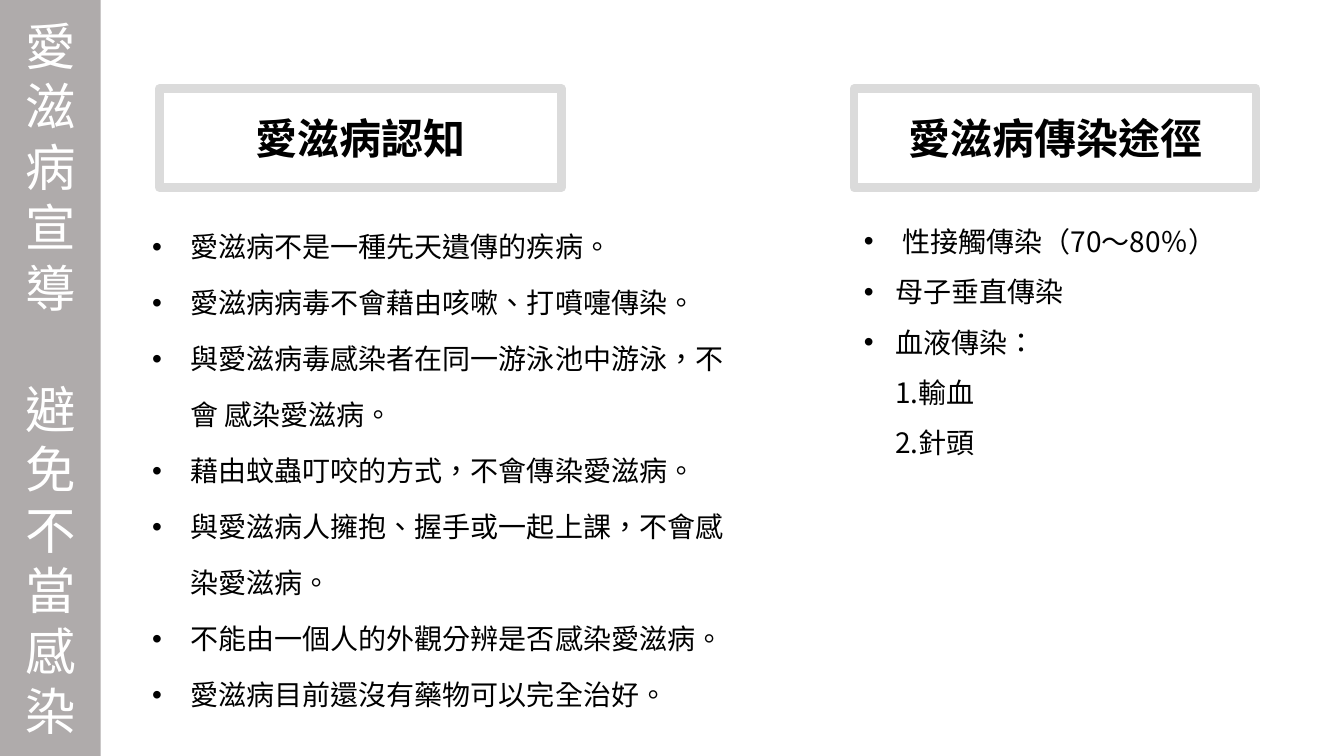
from dataclasses import dataclass

from lxml.etree import SubElement
from pptx import Presentation
from pptx.dml.color import RGBColor
from pptx.enum.shapes import MSO_SHAPE
from pptx.enum.text import MSO_ANCHOR, MSO_AUTO_SIZE, PP_ALIGN
from pptx.oxml.ns import qn
from pptx.shapes.autoshape import Shape
from pptx.slide import Slide
from pptx.text.text import TextFrame
from pptx.util import Inches, Length, Pt

WHITE = RGBColor(0xFF, 0xFF, 0xFF)
BLACK = RGBColor(0, 0, 0)
BAND_GRAY = RGBColor(0xAF, 0xAB, 0xAB)
FRAME_GRAY = RGBColor(0xDB, 0xDB, 0xDB)
FONT_SC = "Noto Sans CJK SC"
FONT_JP = "Noto Sans CJK JP"


@dataclass(frozen=True)
class Item:
    text: str
    margin: float = 0.38
    bullet: bool = True


@dataclass(frozen=True)
class Section:
    heading: str
    heading_left: float
    list_left: float
    list_width: float
    list_height: float
    font: str
    line_spacing: Length | float
    items: tuple[Item, ...]


SECTIONS = (
    Section("愛滋病認知", 1.58, 1.41, 5.99, 5.07, FONT_SC, Pt(40), (
        Item("愛滋病不是一種先天遺傳的疾病。"),
        Item("愛滋病病毒不會藉由咳嗽、打噴嚏傳染。"),
        Item("與愛滋病毒感染者在同一游泳池中游泳，不會 感染愛滋病。"),
        Item("藉由蚊蟲叮咬的方式，不會傳染愛滋病。"),
        Item("與愛滋病人擁抱、握手或一起上課，不會感染愛滋病。"),
        Item("不能由一個人的外觀分辨是否感染愛滋病。"),
        Item("愛滋病目前還沒有藥物可以完全治好。"),
    )),
    Section("愛滋病傳染途徑", 8.47, 8.47, 4.33, 3.58, FONT_JP, 1.5, (
        Item("性接觸傳染（70～80％）"),
        Item("母子垂直傳染", 0.31),
        Item("血液傳染：", 0.31),
        Item("1.輸血", 0.31, False),
        Item("2.針頭", 0.31, False),
    )),
)


def write_paragraph(
    frame: TextFrame,
    text: str,
    *,
    size: int,
    color: RGBColor = BLACK,
    font: str = FONT_SC,
    bold: bool = False,
    align: PP_ALIGN = PP_ALIGN.LEFT,
    line_spacing: Length | float | None = None,
    space_before: float = 0,
    margin: float = 0,
    bullet: bool = False,
) -> None:
    first = frame.paragraphs[0]
    paragraph = frame.add_paragraph() if first.runs else first
    paragraph.alignment = align
    paragraph.line_spacing = line_spacing
    paragraph.space_before = Pt(space_before)
    run = paragraph.add_run()
    run.text = text
    run.font.size = Pt(size)
    run.font.bold = bold
    run.font.color.rgb = color
    run.font.name = font
    run_properties = run.font._element
    run_properties.set("lang", "zh-TW")
    SubElement(run_properties, qn("a:ea"), typeface=font)
    properties = paragraph._p.get_or_add_pPr()
    properties.set("marL", str(Inches(margin)))
    if bullet:
        properties.set("indent", str(-Inches(margin)))
        SubElement(properties, qn("a:buFont"), typeface="Arial")
        SubElement(properties, qn("a:buChar"), char="•")


def add_rectangle(slide: Slide, left: float, top: float, width: float, height: float) -> Shape:
    rectangle = slide.shapes.add_shape(
        MSO_SHAPE.RECTANGLE, Inches(left), Inches(top), Inches(width), Inches(height)
    )
    rectangle.shadow.inherit = False
    rectangle.text_frame.word_wrap = True
    rectangle.text_frame.vertical_anchor = MSO_ANCHOR.MIDDLE
    return rectangle


def add_side_band(slide: Slide) -> None:
    band = add_rectangle(slide, 0, 0, 1, 7.5)
    band.fill.solid()
    band.fill.fore_color.rgb = BAND_GRAY
    band.line.fill.background()
    for slogan, gap in (("愛滋病宣導", 0), ("避免不當感染", 43.2)):
        write_paragraph(band.text_frame, slogan, size=36, color=WHITE,
                        align=PP_ALIGN.CENTER, space_before=gap)


def add_section(slide: Slide, section: Section) -> None:
    heading = add_rectangle(slide, section.heading_left, 0.88, 3.99, 0.98)
    heading.fill.background()
    heading.line.color.rgb = FRAME_GRAY
    heading.line.width = Pt(6)
    write_paragraph(heading.text_frame, section.heading, size=30, bold=True,
                    align=PP_ALIGN.CENTER)

    facts = slide.shapes.add_textbox(
        Inches(section.list_left), Inches(2.01),
        Inches(section.list_width), Inches(section.list_height),
    ).text_frame
    facts.word_wrap = True
    facts.auto_size = MSO_AUTO_SIZE.SHAPE_TO_FIT_TEXT
    for item in section.items:
        write_paragraph(facts, item.text, size=20, font=section.font,
                        line_spacing=section.line_spacing,
                        margin=item.margin, bullet=item.bullet)


def main() -> None:
    presentation = Presentation()
    presentation.slide_width = Inches(13.33)
    presentation.slide_height = Inches(7.5)
    slide = presentation.slides.add_slide(presentation.slide_layouts[6])
    add_side_band(slide)
    for section in SECTIONS:
        add_section(slide, section)
    presentation.save("out.pptx")


if __name__ == "__main__":
    main()
